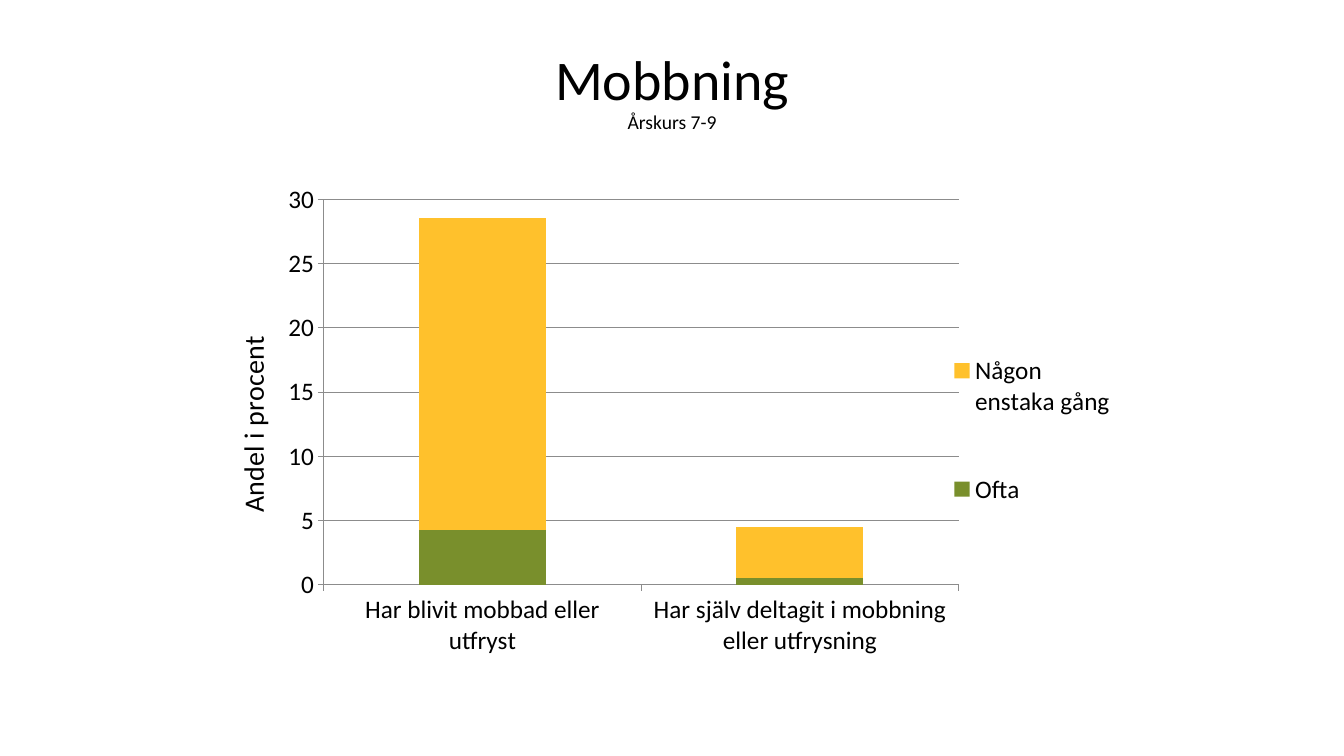
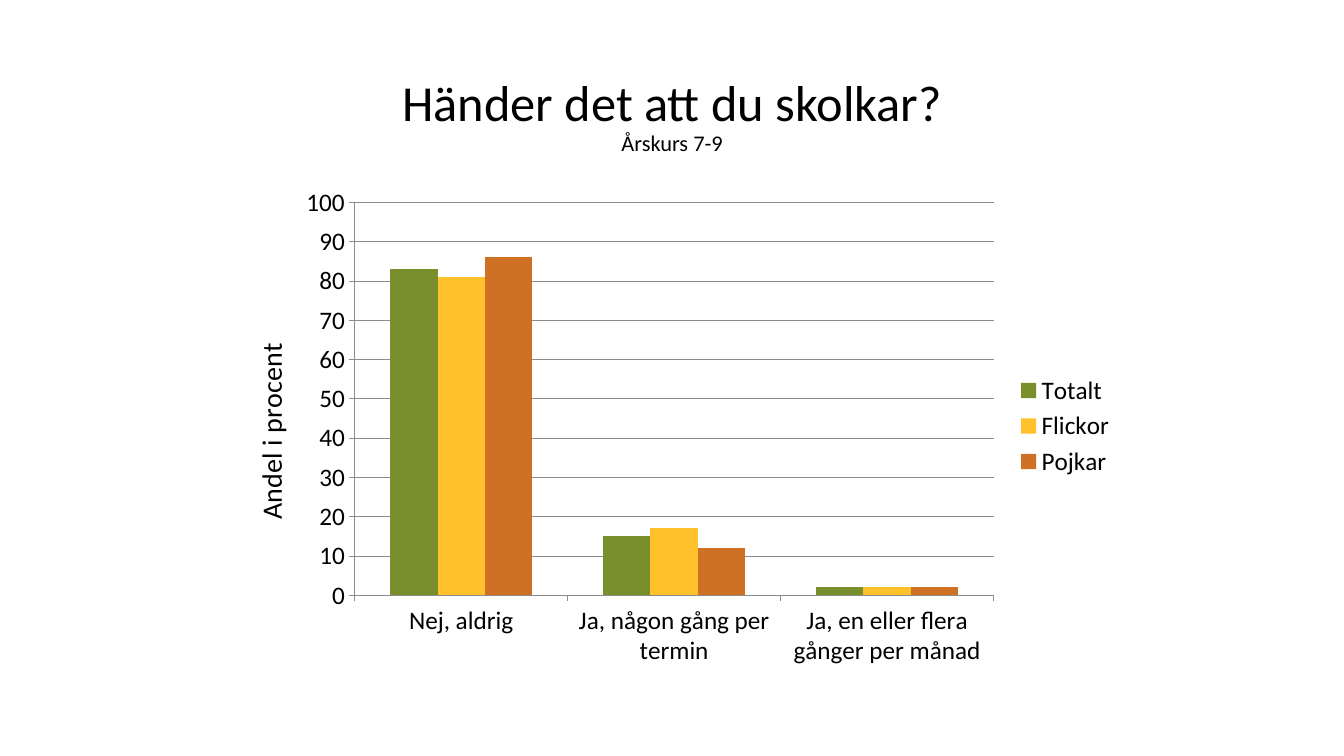
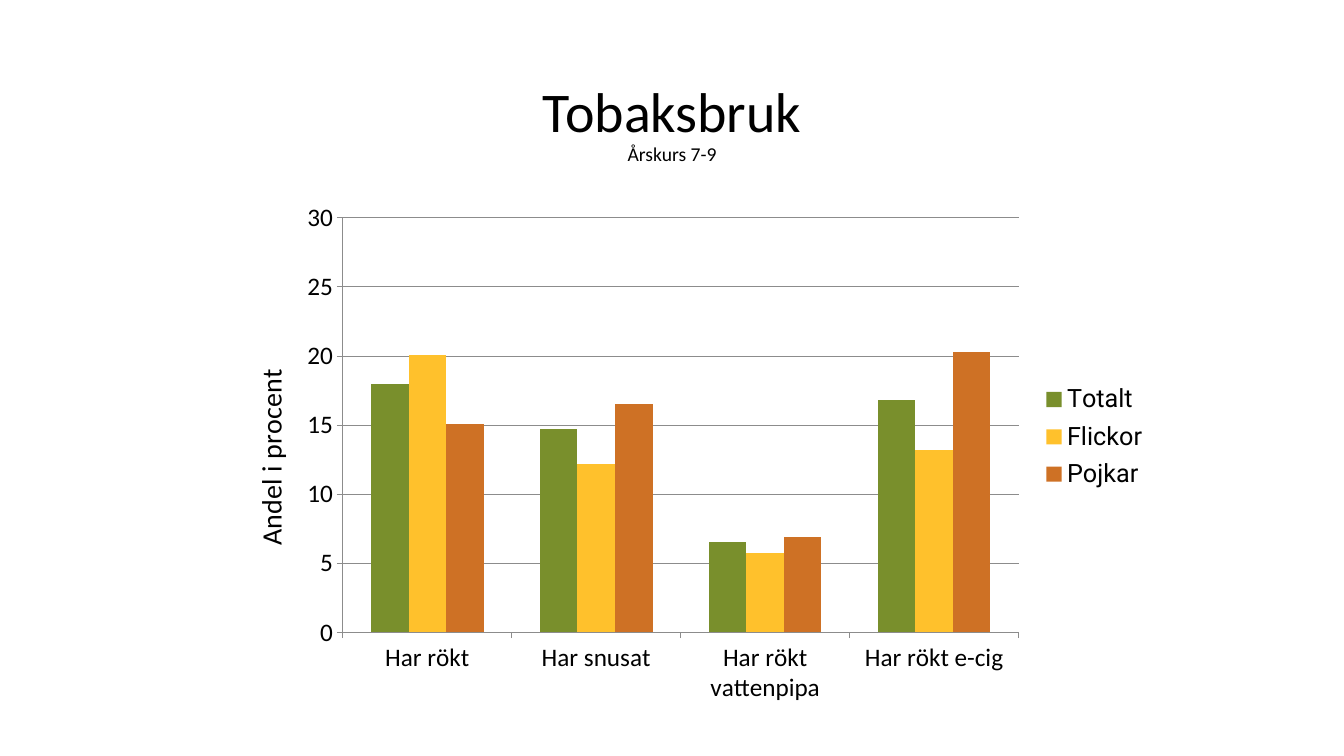
from lxml.etree import SubElement
from pptx import Presentation
from pptx.chart.data import CategoryChartData as ChartData
from pptx.dml.color import RGBColor
from pptx.enum.chart import XL_CHART_TYPE as Kind, XL_LEGEND_POSITION as Side, XL_TICK_MARK as Tick
from pptx.enum.text import MSO_ANCHOR as Anchor, PP_ALIGN as Align
from pptx.oxml.ns import qn
from pptx.util import Cm, Pt

COLORS = {"text": "000000", "line": "8C8C8C", "green": "798F2C",
          "gold": "FFC12C", "rust": "CE7125"}
FILLS = ("green", "gold", "rust")
FONT = "Calibri"
LEFT = 5.51


def color(name):
    """Return the named colour."""
    return RGBColor.from_string(COLORS[name])


def style(font, size, face=FONT):
    """Set face, size and colour of a font."""
    font.name, font.size, font.bold = face, Pt(size), False
    font.color.rgb = color("text")


def rule(line):
    """Draw a thin grey line."""
    line.color.rgb = color("line")
    line.width = Pt(0.5)


def lay(part, after, spot, size, inner=False):
    """Place a chart part at a spot in cm within a chart of the given size."""
    old = part.find(qn("c:layout"))
    if old is not None:
        part.remove(old)
    box = SubElement(part, qn("c:layout"))
    prior = part.find(qn(after)) if after else None
    part.insert(0 if prior is None else part.index(prior) + 1, box)
    man = SubElement(box, qn("c:manualLayout"))
    if inner:
        SubElement(man, qn("c:layoutTarget"), val="inner")
    for tag in ("xMode", "yMode"):
        SubElement(man, qn("c:" + tag), val="edge")
    for tag, value, full in zip("xywh", spot, size * 2):
        SubElement(man, qn("c:" + tag), val=str(value / full))


def heading(slide, box, text, size, small):
    """Add the title with the school years below it."""
    frame = slide.shapes.add_textbox(*map(Cm, box)).text_frame
    frame.word_wrap = True
    frame.vertical_anchor = Anchor.BOTTOM
    frame.margin_left = frame.margin_right = frame.margin_top = frame.margin_bottom = 0
    para = frame.paragraphs[0]
    para.alignment, para.line_spacing = Align.CENTER, 0.9
    main = para.add_run()
    main.text = text
    para.add_line_break()
    sub = para.add_run()
    sub.text = "Årskurs 7-9"
    style(main.font, size)
    style(sub.font, small)


def axes(chart, top, step, spot, size):
    """Style both axes and name the value axis."""
    for axis in (chart.category_axis, chart.value_axis):
        axis.major_tick_mark, axis.minor_tick_mark = Tick.OUTSIDE, Tick.NONE
        style(axis.tick_labels.font, 18)
        rule(axis.format.line)
    axis.minimum_scale, axis.maximum_scale, axis.major_unit = 0, top, step
    axis.has_major_gridlines = True
    rule(axis.major_gridlines.format.line)
    label = axis.axis_title
    para = label.text_frame.paragraphs[0]
    run = para.add_run()
    run.text = "Andel i procent"
    style(para.font, 20)
    style(run.font, 20)
    title = axis._element.find(qn("c:title"))
    body = title.find(".//" + qn("a:bodyPr"))
    body.set("rot", "-5400000")
    body.set("vert", "horz")
    lay(title, "c:tx", spot, size)


def columns(slide, box, kind, cats, rows, top, step, plot, name, key=None, face=FONT):
    """Add a column chart with its legend at the right."""
    data = ChartData()
    data.categories = cats
    for label, values in rows.items():
        data.add_series(label, values)
    chart = slide.shapes.add_chart(kind, *map(Cm, box), data).chart
    style(chart.font, 18, "Roboto")
    chart.has_title = False
    size = box[2:]
    bars = chart.plots[0]
    bars.gap_width, bars.vary_by_categories = 150, False
    bars.overlap = 100 if kind == Kind.COLUMN_STACKED else 0
    for row, fill in zip(bars.series, FILLS):
        row.format.fill.solid()
        row.format.fill.fore_color.rgb = color(fill)
    axes(chart, top, step, name, size)
    lay(chart._chartSpace.chart.plotArea, None, plot, size, True)
    chart.has_legend = True
    legend = chart.legend
    legend.position, legend.include_in_layout = Side.RIGHT, False
    style(legend.font, 18, face)
    if key:
        lay(legend._element, "c:legendPos", key, size)


def main():
    """Build the three slides."""
    deck = Presentation()
    deck.slide_width, deck.slide_height = Cm(33.87), Cm(19.05)
    first, second, third = (deck.slides.add_slide(deck.slide_layouts[6]) for _ in range(3))
    frame = (LEFT, 4.45, 22.86, 12.57)

    heading(first, (LEFT, 0.58, 22.86, 2.79), "Mobbning", 40, 14)
    columns(first, frame, Kind.COLUMN_STACKED,
            ("Har blivit mobbad eller utfryst", "Har själv deltagit i mobbning eller utfrysning"),
            {"Ofta": (4.3, 0.5), "Någon enstaka gång": (24.2, 4)},
            30, 5, (2.65, 0.57, 16, 9.72), (0.24, 3.9), (18.4, 3.06, 4.2, 6.65))

    heading(second, (LEFT, 1.02, 22.86, 2.92), "Händer det att du skolkar?", 36, 16)
    columns(second, frame, Kind.COLUMN_CLUSTERED,
            ("Nej, aldrig", "Ja, någon gång per termin", "Ja, en eller flera gånger per månad"),
            {"Totalt": (83, 15, 2), "Flickor": (81, 17, 2), "Pojkar": (86, 12, 2)},
            100, 10, (3.43, 0.65, 16.1, 9.9), (0.69, 4.07))

    heading(third, (LEFT, 0.74, 22.86, 3.43), "Tobaksbruk", 40, 14)
    columns(third, (LEFT, 4.83, 23.67, 13.13), Kind.COLUMN_CLUSTERED,
            ("Har rökt", "Har snusat", "Har rökt vattenpipa", "Har rökt e-cig"),
            {"Totalt": (18, 14.7, 6.5, 16.8), "Flickor": (20.1, 12.2, 5.7, 13.2),
             "Pojkar": (15.1, 16.5, 6.9, 20.3)},
            30, 5, (3.13, 0.66, 17.03, 10.44), (0.69, 4.35), (20.72, 4.67, 2.7, 3.02), "Roboto")

    deck.save("out.pptx")


if __name__ == "__main__":
    main()
